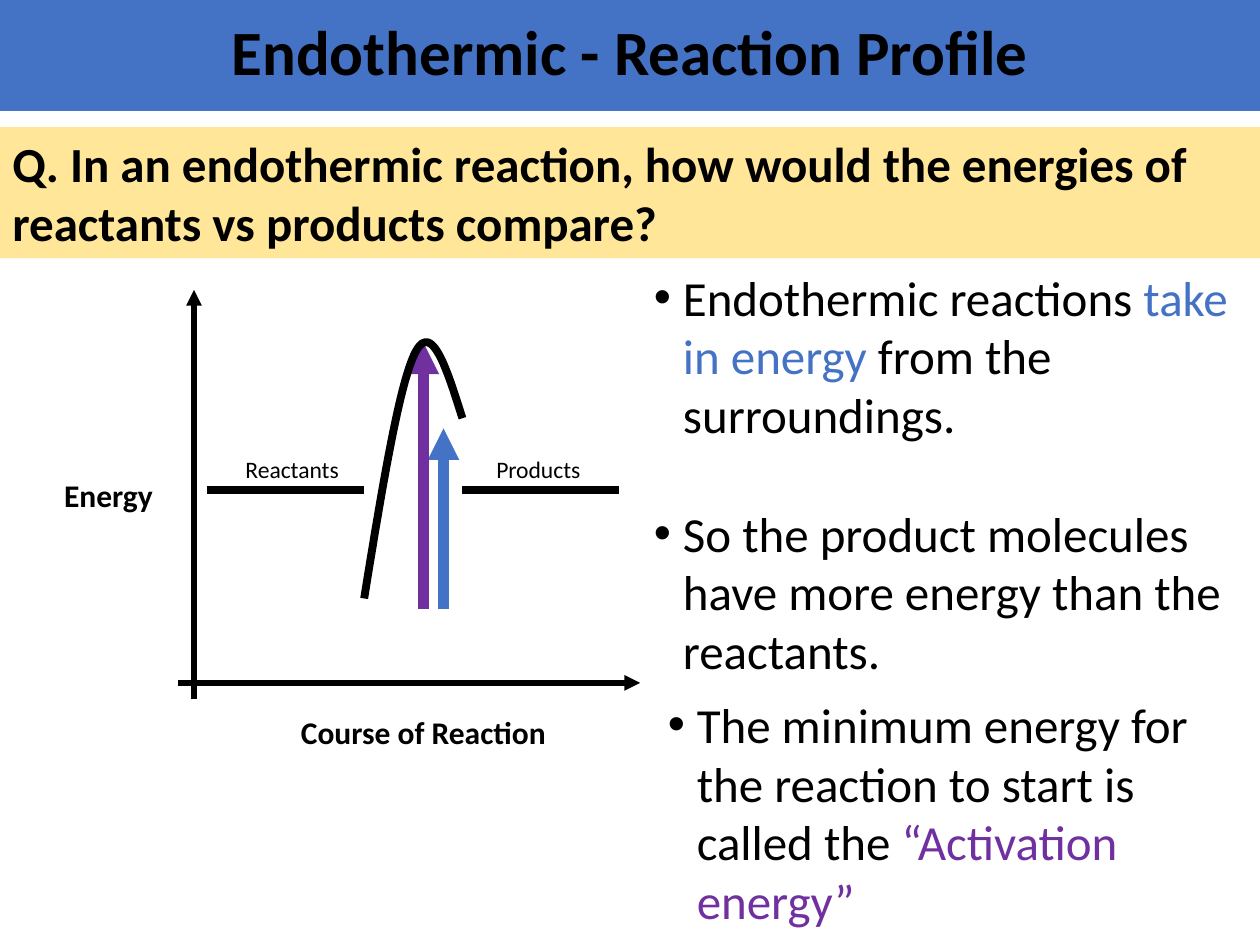
from lxml.etree import SubElement
from pptx import Presentation
from pptx.dml.color import RGBColor
from pptx.enum.shapes import MSO_CONNECTOR
from pptx.enum.text import MSO_ANCHOR, MSO_AUTO_SIZE, PP_ALIGN
from pptx.oxml.ns import qn
from pptx.util import Inches, Pt

BLACK, BLUE, PURPLE, CREAM = "000000", "4472C4", "7030A0", "FFE699"

TITLE = "Endothermic - Reaction Profile"
QUESTION = ("Q. In an endothermic reaction, how would the energies of "
            "reactants vs products compare?")
POINT_LISTS = [
    ((5.09, 2.07, 4.91, 3.4), [
        [("Endothermic reactions ", BLACK), ("take in energy ", BLUE),
         ("from the surroundings.", BLACK)],
        [("So the product molecules have more energy than the reactants.", BLACK)],
    ]),
    ((5.2, 5.46, 4.8, 1.99), [
        [("The minimum energy for the reaction to start is called the ", BLACK),
         ("“Activation energy”", PURPLE)],
    ]),
]
LABELS = [
    ("Energy", (0.41, 3.73, 0.91, 0.4), 18, True),
    ("Course of Reaction", (2.29, 5.61, 2.16, 0.4), 18, True),
    ("Reactants", (1.85, 3.56, 0.96, 0.33), 13.5, False),
    ("Products", (3.84, 3.56, 0.88, 0.33), 13.5, False),
]
LINES = [
    ((1.54, 5.55), (1.54, 2.3), BLACK, 3, True),
    ((1.41, 5.42), (5.08, 5.42), BLACK, 3, True),
    ((1.64, 3.89), (2.89, 3.89), BLACK, 4.5, False),
    ((3.67, 3.89), (4.91, 3.89), BLACK, 4.5, False),
    ((3.52, 4.83), (3.52, 3.4), BLUE, 6, True),
    ((3.36, 4.83), (3.36, 2.72), PURPLE, 6, True),
]
CURVE = [
    ((3.67, 3.32), (3.55, 2.94), (3.43, 2.55), (3.3, 2.79)),
    ((3.3, 2.79), (3.17, 3.03), (3.03, 3.89), (2.89, 4.75)),
]
CURVE_STEPS = 24


def paint(color_format, hex_color):
    color_format.rgb = RGBColor.from_string(hex_color)


def fill_with(shape, hex_color):
    shape.fill.solid()
    paint(shape.fill.fore_color, hex_color)


def place(shape, box):
    shape.left, shape.top, shape.width, shape.height = map(Inches, box)
    shape.text_frame.auto_size = MSO_AUTO_SIZE.NONE


def add_run(paragraph, text, size, hex_color=BLACK, bold=False):
    run = paragraph.add_run()
    run.text = text
    run.font.name, run.font.size, run.font.bold = "Calibri", Pt(size), bold
    paint(run.font.color, hex_color)


def add_text(slide, text, box, size, bold, wrap):
    label = slide.shapes.add_textbox(*map(Inches, box))
    label.text_frame.word_wrap = wrap
    add_run(label.text_frame.paragraphs[0], text, size, bold=bold)
    return label


def fill_list(body, box, points):
    place(body, box)
    frame = body.text_frame
    for index, runs in enumerate(points):
        point = frame.add_paragraph() if index else frame.paragraphs[0]
        point.space_before = Pt(34 if index else 0)
        properties = point._p.get_or_add_pPr()
        properties.set("marL", str(Inches(0.23)))
        properties.set("indent", str(Inches(-0.23)))
        SubElement(properties, qn("a:buFont"), typeface="Arial")
        SubElement(properties, qn("a:buChar"), char="•")
        for text, hex_color in runs:
            add_run(point, text, 28, hex_color)


def add_line(slide, start, end, hex_color, width, arrow):
    line = slide.shapes.add_connector(
        MSO_CONNECTOR.STRAIGHT, *map(Inches, start + end))
    paint(line.line.color, hex_color)
    line.line.width = Pt(width)
    if arrow:
        SubElement(line.line._get_or_add_ln(), qn("a:tailEnd"), type="triangle")
    SubElement(line._element.spPr, qn("a:effectLst"))


def bezier(corners, t):
    weights = ((1 - t) ** 3, 3 * t * (1 - t) ** 2, 3 * t ** 2 * (1 - t), t ** 3)
    return tuple(Inches(sum(w * v for w, v in zip(weights, axis)))
                 for axis in zip(*corners))


def add_curve(slide):
    points = [bezier(part, step / CURVE_STEPS)
              for part in CURVE for step in range(CURVE_STEPS + 1)]
    builder = slide.shapes.build_freeform(*points[0])
    builder.add_line_segments(points[1:], close=False)
    curve = builder.convert_to_shape()
    curve.shadow.inherit = False
    curve.fill.background()
    paint(curve.line.color, BLACK)
    curve.line.width = Pt(4.5)


def main():
    deck = Presentation()
    deck.slide_width, deck.slide_height = Inches(10), Inches(7.5)
    slide = deck.slides.add_slide(deck.slide_layouts.get_by_name("Two Content"))
    title, *bodies = slide.placeholders

    place(title, (0, 0, 10, 0.88))
    fill_with(title, BLUE)
    title.text_frame.vertical_anchor = MSO_ANCHOR.MIDDLE
    heading = title.text_frame.paragraphs[0]
    heading.alignment, heading.line_spacing = PP_ALIGN.CENTER, 0.9
    add_run(heading, TITLE, 36, bold=True)

    for body, (box, points) in zip(bodies, POINT_LISTS):
        fill_list(body, box, points)

    question = add_text(slide, QUESTION, (0, 1.01, 10, 1.04), 28, True, True)
    fill_with(question, CREAM)
    for text, box, size, bold in LABELS:
        add_text(slide, text, box, size, bold, False)
    for line in LINES:
        add_line(slide, *line)
    add_curve(slide)
    deck.save("out.pptx")


if __name__ == "__main__":
    main()
